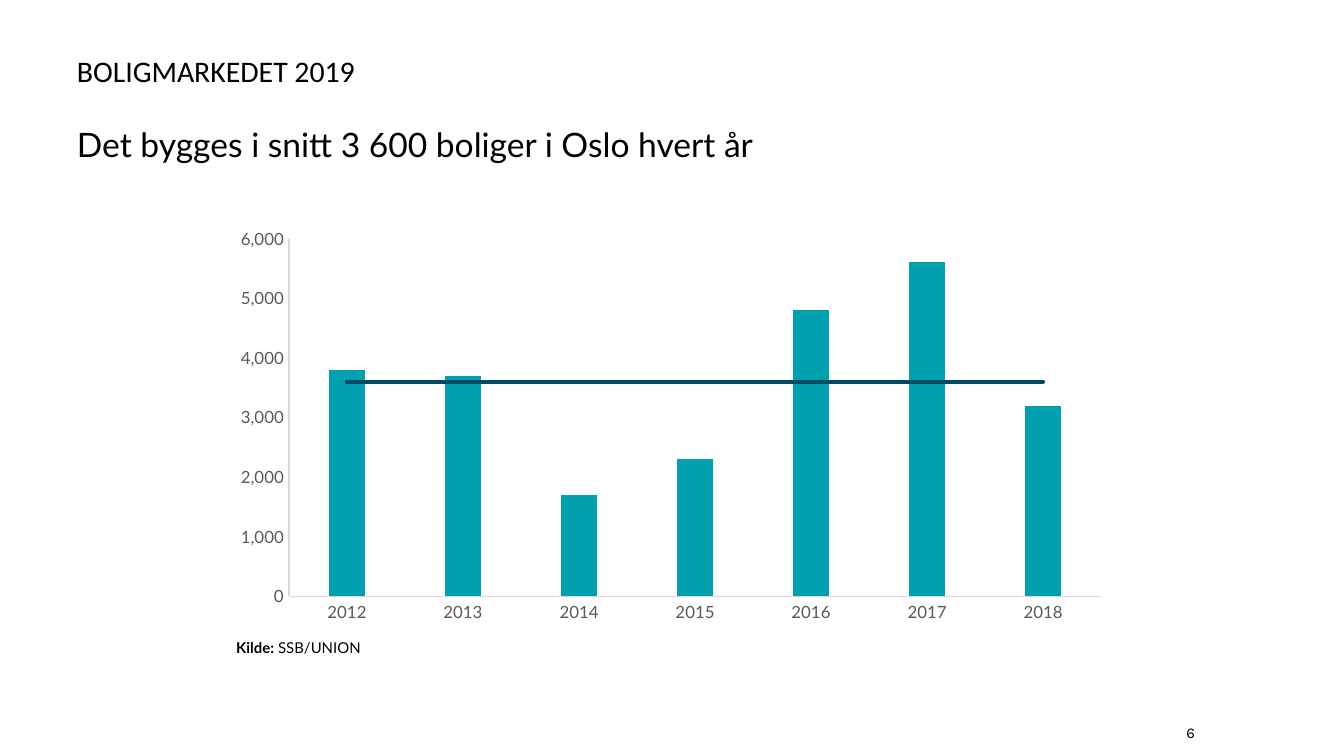
from lxml.etree import SubElement
from pptx import Presentation
from pptx.chart.data import CategoryChartData
from pptx.dml.color import RGBColor
from pptx.enum.chart import XL_CHART_TYPE, XL_MARKER_STYLE, XL_TICK_MARK
from pptx.enum.text import MSO_ANCHOR, PP_ALIGN
from pptx.oxml.ns import qn
from pptx.util import Pt

PX = 914400 / 134.4
COLORS = {
    "text": "000000",
    "axis_text": "595959",
    "axis_line": "D9D9D9",
    "homes": "00A0AF",
    "average": "004A64",
}
HOMES_BUILT = {
    "2012": 3800,
    "2013": 3700,
    "2014": 1700,
    "2015": 2300,
    "2016": 4800,
    "2017": 5600,
    "2018": 3200,
}
AVERAGE = 3600


def px(*lengths):
    """Turn pixel lengths into EMU."""
    return [round(length * PX) for length in lengths]


def color(name):
    """Look up a named colour."""
    return RGBColor.from_string(COLORS[name])


def apply(target, **values):
    """Set each given attribute on the target."""
    for attribute, value in values.items():
        setattr(target, attribute, value)


def style_font(font, size, face="Lato", shade="text", bold=False):
    """Give a font its face, size, weight and colour."""
    apply(font, name=face, size=Pt(size), bold=bold)
    font.color.rgb = color(shade)


def add_text(slide, box, runs, size, face="Lato", align=PP_ALIGN.LEFT, **frame_format):
    """Add a one-paragraph text box from (text, bold) runs."""
    frame = slide.shapes.add_textbox(*px(*box)).text_frame
    apply(frame, word_wrap=True, **frame_format)
    paragraph = frame.paragraphs[0]
    paragraph.alignment = align
    for text, bold in runs:
        run = paragraph.add_run()
        run.text = text
        style_font(run.font, size, face, bold=bold)


def style_axis(axis):
    """Give an axis a pale line, grey labels and no ticks or grid."""
    apply(
        axis,
        has_major_gridlines=False,
        major_tick_mark=XL_TICK_MARK.NONE,
        minor_tick_mark=XL_TICK_MARK.NONE,
    )
    axis.format.line.width = Pt(0.75)
    axis.format.line.color.rgb = color("axis_line")
    style_font(axis.tick_labels.font, 9, shade="axis_text")


def split_off_line(chart):
    """Move the last bar series to a line plot on the same axes."""
    bars = chart.element.find(".//" + qn("c:barChart"))
    series = bars.findall(qn("c:ser"))[-1]
    for bar_only in series.findall(qn("c:invertIfNegative")):
        series.remove(bar_only)
    lines = bars.makeelement(qn("c:lineChart"))
    bars.addnext(lines)
    SubElement(lines, qn("c:grouping"), val="standard")
    SubElement(lines, qn("c:varyColors"), val="0")
    lines.append(series)
    SubElement(lines, qn("c:marker"), val="1")
    for axis_id in bars.findall(qn("c:axId")):
        SubElement(lines, qn("c:axId"), val=axis_id.get("val"))


def style_average(chart, average):
    """Draw the average as a plain, round-ended line."""
    average.smooth = False
    average.marker.style = XL_MARKER_STYLE.NONE
    average.format.line.width = Pt(2.25)
    average.format.line.color.rgb = color("average")
    lines = chart.element.find(".//" + qn("c:lineChart"))
    lines.find(".//" + qn("a:ln")).set("cap", "rnd")


def add_homes_chart(slide, box):
    """Add the yearly columns with the average line."""
    homes = CategoryChartData(number_format="#,##0")
    homes.categories = list(HOMES_BUILT)
    homes.add_series("Series 1", list(HOMES_BUILT.values()))
    homes.add_series("Series 2", [AVERAGE] * len(HOMES_BUILT))
    chart = slide.shapes.add_chart(
        XL_CHART_TYPE.COLUMN_CLUSTERED, *px(*box), homes
    ).chart
    apply(chart, has_legend=False, has_title=False)
    style_font(chart.font, 9)
    split_off_line(chart)

    columns, averages = chart.plots
    apply(columns, gap_width=219, overlap=-27, vary_by_categories=False)
    fill = columns.series[0].format.fill
    fill.solid()
    fill.fore_color.rgb = color("homes")
    style_average(chart, averages.series[0])

    for axis in (chart.category_axis, chart.value_axis):
        style_axis(axis)
    apply(chart.value_axis, minimum_scale=0, maximum_scale=6000, major_unit=1000)
    apply(
        chart.value_axis.tick_labels, number_format="#,##0", number_format_is_linked=False
    )


def main():
    """Build the housing market slide."""
    deck = Presentation()
    deck.slide_width, deck.slide_height = px(1344, 756)
    slide = deck.slides.add_slide(deck.slide_layouts[6])
    flush = dict(margin_left=0, margin_top=0, margin_right=0, margin_bottom=0)

    add_text(
        slide,
        (77, 124, 1159, 40),
        [("Det bygges i snitt 3 600 boliger i Oslo hvert år", False)],
        18,
        **flush,
    )
    add_text(
        slide, (1152, 724, 43, 18), [("6", False)], 8, "Karla", PP_ALIGN.RIGHT, **flush
    )
    add_text(
        slide,
        (77, 52, 1159, 36),
        [("BOLIGMARKEDET 2019", False)],
        16,
        "Calibri",
        vertical_anchor=MSO_ANCHOR.BOTTOM,
        **flush,
    )
    add_homes_chart(slide, (223, 220, 896, 411))
    add_text(
        slide, (223, 632, 929, 32), [("Kilde: ", True), ("SSB/UNION", False)], 8
    )
    deck.save("out.pptx")


if __name__ == "__main__":
    main()
